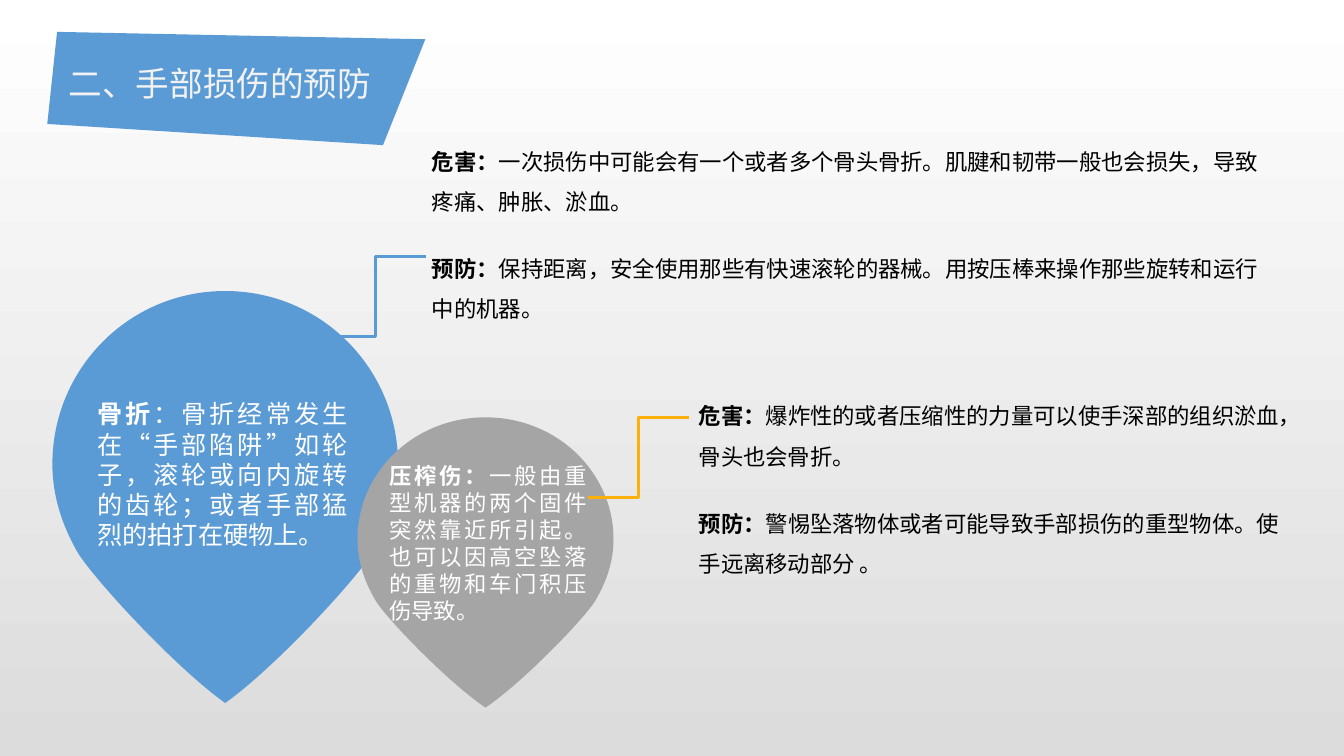
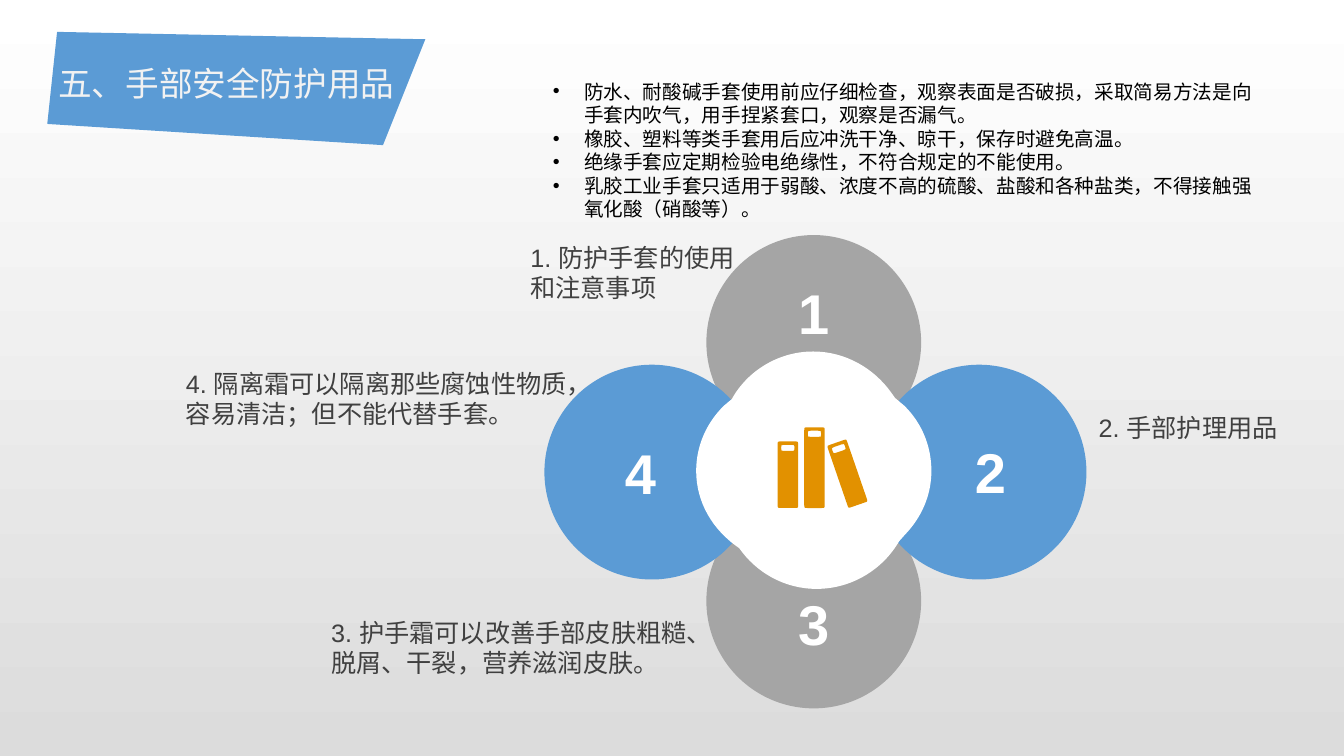
import math

import lxml.etree
import pptx
import pptx.dml.color
import pptx.enum.lang
import pptx.enum.shapes
import pptx.enum.text
import pptx.oxml.ns
import pptx.util

BLUE, GREY, ORANGE, AMBER = "5B9BD5", "A5A5A5", "E29100", "FCB00C"
WHITE, OFF_WHITE, BLACK, DARK = "FFFFFF", "F2F2F2", "000000", "404040"
ALIGN = pptx.enum.text.PP_ALIGN
qn = pptx.oxml.ns.qn

prs = pptx.Presentation()
prs.slide_width = pptx.util.Inches(13.333)
prs.slide_height = pptx.util.Inches(7.5)
# The grid has 100 columns and 100 rows.
COL, ROW = prs.slide_width / 100, prs.slide_height / 100


def paint(fill, color):
    fill.solid()
    fill.fore_color.rgb = pptx.dml.color.RGBColor.from_string(color)


def add_text(s, box, paras, sp=None, size=18, color=DARK, align=ALIGN.LEFT,
             spacing=None, gap=0, bullet=None):
    """Write paragraphs of (text, bold) runs in shape sp, or in a new text box."""
    if sp is None:
        x, y, w, h = box
        sp = s.shapes.add_textbox(int(x * COL), int(y * ROW), int(w * COL), int(h * ROW))
    tf = sp.text_frame
    tf.word_wrap = True
    for i, runs in enumerate(paras):
        p = tf.add_paragraph() if i else tf.paragraphs[0]
        p.alignment = align
        p.line_spacing = spacing
        if i and gap:
            p.space_before = pptx.util.Pt(gap)
        if bullet:
            pPr = p._p.get_or_add_pPr()
            indent = pptx.util.Inches(0.31)
            pPr.set("marL", str(indent))
            pPr.set("indent", str(-indent))
            lxml.etree.SubElement(pPr, qn("a:buFont")).set("typeface", "Arial")
            lxml.etree.SubElement(pPr, qn("a:buChar")).set("char", bullet)
        for text, bold in runs:
            r = p.add_run()
            r.text = text
            r.font.name = "Arial"
            r.font.size = pptx.util.Pt(size)
            r.font.bold = bold
            r.font.language_id = pptx.enum.lang.MSO_LANGUAGE_ID.SIMPLIFIED_CHINESE
            paint(r.font.fill, color)


# Shared background
bg = prs.slide_master.background.fill
bg.gradient()
bg.gradient_angle = 270
for stop, color in zip(bg.gradient_stops, (WHITE, "DCDCDC")):
    stop.color.rgb = pptx.dml.color.RGBColor.from_string(color)

injuries, gear = [prs.slides.add_slide(prs.slide_layouts[6]) for _ in range(2)]

# Four circles around the hub; the lower one holds its number itself
DIAMETER = 15.98
for cx, cy, fill, number in ((60.55, 45.3, GREY, None), (60.55, 79.5, GREY, "3"),
                             (72.85, 62.45, BLUE, None), (48.5, 62.45, BLUE, None)):
    d = int(DIAMETER * COL)
    sp = gear.shapes.add_shape(pptx.enum.shapes.MSO_SHAPE.OVAL,
                               int(cx * COL - d / 2), int(cy * ROW - d / 2), d, d)
    sp.shadow.inherit = False
    paint(sp.fill, fill)
    sp.line.fill.background()
    if number:
        sp.text_frame.vertical_anchor = pptx.enum.text.MSO_ANCHOR.BOTTOM
        sp.text_frame.margin_bottom = pptx.util.Inches(0.2)
        add_text(gear, None, [[(number, True)]], sp=sp, size=40, color=WHITE,
                 align=ALIGN.CENTER)

# Outlines: a start point, then corners (x, y) or curves (x1, y1, x2, y2, x, y)
UNIT_BOX = (0, 0, 1, 1)
BAND = [(4.25, 4.22), (31.65, 5.2), (28.5, 19.2), (3.52, 16.4)]
PIN = [(0.5, 0),
       (0.78, 0, 1, 0.19, 1, 0.42),
       (1, 0.5, 0.97, 0.57, 0.93, 0.63),
       (0.89, 0.69, 0.65, 0.91, 0.5, 1),
       (0.35, 0.91, 0.11, 0.69, 0.07, 0.63),
       (0.03, 0.57, 0, 0.5, 0, 0.42),
       (0, 0.19, 0.22, 0, 0.5, 0)]
HUB = [(60.5, 46.5),
       (62.9, 46.5, 65, 48.7, 66.3, 51.9),
       (66.6, 52.65),
       (67.3, 53.7),
       (68.55, 55.9, 69.3, 58.9, 69.3, 62.3),
       (69.3, 65.6, 68.55, 68.5, 67.3, 70.8),
       (66.9, 71.6),
       (65.7, 75.3, 63.4, 77.9, 60.75, 77.9),
       (58.35, 77.9, 56.25, 75.7, 55, 72.5),
       (53, 70.1, 51.8, 66.4, 51.8, 62.3),
       (51.8, 58.9, 52.6, 55.9, 53.85, 53.7),
       (54.45, 52.8),
       (55.6, 49.1, 57.9, 46.5, 60.5, 46.5)]

outlines = [(injuries, [BAND], UNIT_BOX, BLUE),
            (injuries, [PIN], (3.9, 38.5, 25.72, 54.5), BLUE),
            (injuries, [PIN], (26.6, 55.2, 19.05, 38.4), GREY),
            (gear, [BAND], UNIT_BOX, BLUE),
            (gear, [HUB], UNIT_BOX, WHITE)]

# Books are rounded bars with a rounded hole near the top, in columns
BOOK_W, HOLE_W, HOLE_H, HOLE_DROP = 1.52, 1, 0.46, 0.48
for cx, cy, height, angle in ((60.6, 61.87, 6, 0), (58.62, 62.8, 4.95, 0),
                              (63.05, 62.65, 4.9, -19)):
    sin, cos = math.sin(math.radians(angle)), math.cos(math.radians(angle))
    contours = []
    for mid, w, h, radius in ((0, BOOK_W, height, 0.25),
                              (HOLE_DROP - height / 2, HOLE_W, HOLE_H, 0.23)):
        contour = []
        for sx, sy in ((1, -1), (1, 1), (-1, 1), (-1, -1)):
            corner = (sx * w / 2, mid + sy * h / 2)
            ends = [(corner[0] - sx * radius, corner[1]),
                    (corner[0], corner[1] - sy * radius)]
            if sx == sy:
                ends.reverse()
            enter, bend, leave = [(cx + x * cos - y * sin, cy + (x * sin + y * cos) * COL / ROW)
                                  for x, y in (ends[0], corner, ends[1])]
            contour += [enter, bend + bend + leave]
        contours.append(contour)
    outlines.append((gear, contours, UNIT_BOX, ORANGE))

for s, contours, (left, top, width, height), fill in outlines:
    builder = None
    for contour in contours:
        points = [((left + seg[i] * width) * COL, (top + seg[i + 1] * height) * ROW)
                  for seg in contour for i in range(0, len(seg), 2)]
        if builder is None:
            builder = s.shapes.build_freeform(*points[0])
        else:
            builder.move_to(*points[0])
        builder.add_line_segments(points[1:], close=True)
    sp = builder.convert_to_shape()
    # Join the three points of each curve into one Bezier segment.
    lines = iter(list(sp._element.iter(qn("a:lnTo"))))
    for seg in (seg for contour in contours for seg in contour[1:]):
        first = next(lines)
        if len(seg) == 6:
            first.tag = qn("a:cubicBezTo")
            for _ in range(2):
                line = next(lines)
                first.append(line[0])
                line.getparent().remove(line)
    sp.shadow.inherit = False
    paint(sp.fill, fill)
    sp.line.fill.background()

# Titles
for s, x, title in ((injuries, 4.37, "二、手部损伤的预防"),
                    (gear, 3.6, "五、手部安全防护用品")):
    add_text(s, (x, 7.7, 27.3, 6.7), [[(title, False)]], size=24, color=OFF_WHITE)

# Injuries: text in the pins, advice beside them, elbow lines between
for box, size, name, text in (
        ((6.5, 52.07, 20.1, 21.6), 18, "骨折",
         "：骨折经常发生在“手部陷阱”如轮子，滚轮或向内旋转的齿轮；或者手部猛烈的拍打在硬物上。"),
        ((28.23, 60.5, 16.2, 22.9), 16, "压榨伤：",
         "一般由重型机器的两个固件突然靠近所引起。也可以因高空坠落的重物和车门积压伤导致。")):
    add_text(injuries, box, [[(name, True), (text, False)]],
             size=size, color=WHITE, align=ALIGN.JUSTIFY)

for box, harm, prevention in (
        ((31.4, 17.15, 63.2, 25.9),
         "一次损伤中可能会有一个或者多个骨头骨折。肌腱和韧带一般也会损失，导致疼痛、肿胀、淤血。",
         "保持距离，安全使用那些有快速滚轮的器械。用按压棒来操作那些旋转和运行中的机器。"),
        ((51.25, 50.8, 45.2, 25.9),
         "爆炸性的或者压缩性的力量可以使手深部的组织淤血，骨头也会骨折。",
         "警惕坠落物体或者可能导致手部损伤的重型物体。使手远离移动部分 。")):
    add_text(injuries, box, [[("危害：", True), (harm, False)],
                             [("预防：", True), (prevention, False)]],
             size=16, color=BLACK, spacing=1.5, gap=19.1)

for x, y, color in ((31.67, 33.95, BLUE), (51.27, 55.2, AMBER)):
    c = injuries.shapes.add_connector(
        pptx.enum.shapes.MSO_CONNECTOR.ELBOW,
        int(x * COL), int(y * ROW), int((x - 7.5) * COL), int((y + 10.6) * ROW))
    paint(c.line.fill, color)
    c.line.width = pptx.util.Pt(2.25)
    lxml.etree.SubElement(c._element.spPr, qn("a:effectLst"))

# Gear: numbers on the other circles, captions and rules
for number, x, y in (("2", 71.5, 57.2), ("1", 58.35, 36.2), ("4", 45.45, 57.35)):
    add_text(gear, (x, y, 4.4, 10.2), [[(number, True)]],
             size=40, color=WHITE, align=ALIGN.CENTER)

for box, lines in (
        ((81, 53.9, 15.1, 5.4), ("2. 手部护理用品",)),
        ((38.72, 31.43, 16.9, 9.5), ("1. 防护手套的使用", "和注意事项")),
        ((23.9, 81.03, 34.7, 9.5), ("3. 护手霜可以改善手部皮肤粗糙、", "脱屑、干裂，营养滋润皮肤。")),
        ((13.1, 48, 50, 9.5), ("4. 隔离霜可以隔离那些腐蚀性物质，", "容易清洁；但不能代替手套。"))):
    add_text(gear, box, [[(line, False)] for line in lines])

glove_rules = (
    "防水、耐酸碱手套使用前应仔细检查，观察表面是否破损，采取简易方法是向手套内吹气，用手捏紧套口，观察是否漏气。",
    "橡胶、塑料等类手套用后应冲洗干净、晾干，保存时避免高温。",
    "绝缘手套应定期检验电绝缘性，不符合规定的不能使用。",
    "乳胶工业手套只适用于弱酸、浓度不高的硫酸、盐酸和各种盐类，不得接触强氧化酸（硝酸等）。")
add_text(gear, (40.4, 9.85, 54.15, 20.1), [[(rule, False)] for rule in glove_rules],
         size=14, color=BLACK, bullet="•")

prs.save("out.pptx")
